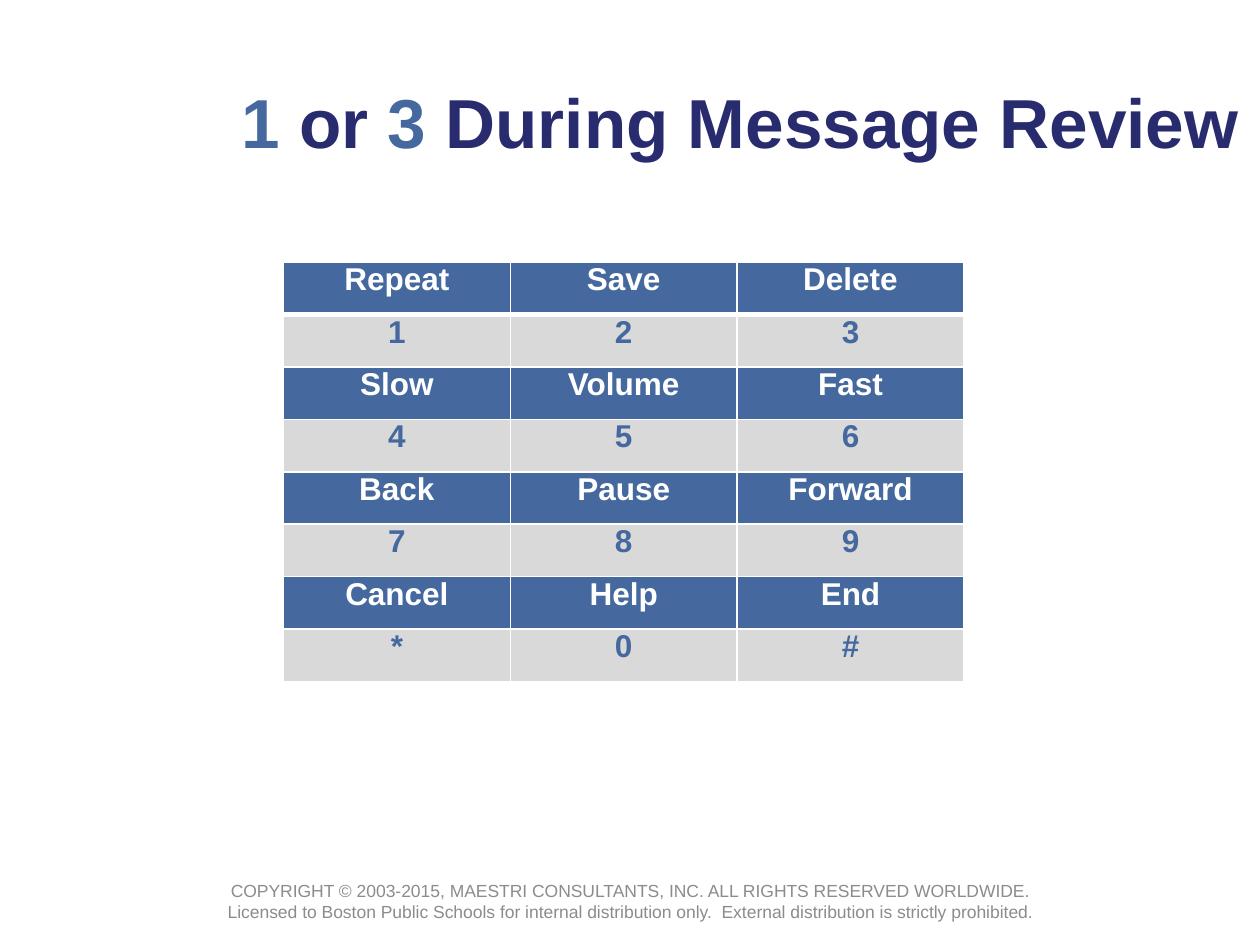
"""Build the slide showing the phone keypad commands for message review."""
from lxml import etree
from pptx import Presentation, util as u
from pptx.dml import color
from pptx.enum import text
from pptx.oxml import ns

COLORS = {"blue": "45699E", "navy": "282B6D", "gray": "D9D9D9",
          "white": "FFFFFF", "footer": "8C8C8C"}
KEYPAD = [("Repeat", "Save", "Delete"), ("1", "2", "3"),
          ("Slow", "Volume", "Fast"), ("4", "5", "6"),
          ("Back", "Pause", "Forward"), ("7", "8", "9"),
          ("Cancel", "Help", "End"), ("*", "0", "#")]


def add_text(frame, spans, size, bold):
    para = frame.paragraphs[0]
    para.alignment = text.PP_ALIGN.CENTER
    for words, shade in spans:
        span = para.add_run()
        span.text = words
        for name, value in {"name": "Arial", "size": u.Pt(size), "bold": bold}.items():
            setattr(span.font, name, value)
        span.font.color.rgb = color.RGBColor.from_string(COLORS[shade])


def add_borders(cell, widths):
    properties = cell._tc.get_or_add_tcPr()
    for index, (side, width) in enumerate(widths.items()):
        line = etree.Element(ns.qn(f"a:ln{side}"), w=str(u.Pt(width)))
        fill = etree.SubElement(line, ns.qn("a:solidFill"))
        etree.SubElement(fill, ns.qn("a:srgbClr"), val=COLORS["white"])
        properties.insert(index, line)


deck = Presentation()
deck.slide_width, deck.slide_height = u.Inches(10), u.Inches(7.5)
page = deck.slides.add_slide(deck.slide_layouts[5])

title = page.shapes.title
place = {"left": 1.75, "top": 0.33, "width": 8.25, "height": 1.25}
for name, value in place.items():
    setattr(title, name, u.Inches(value))
footer = page.shapes.add_textbox(u.Inches(1.5), u.Inches(6.95), u.Inches(7), u.Inches(0.4))
frame_format = {"word_wrap": True, "auto_size": text.MSO_AUTO_SIZE.NONE,
                "vertical_anchor": text.MSO_ANCHOR.MIDDLE}
for box in (title, footer):
    for name, value in frame_format.items():
        setattr(box.text_frame, name, value)

add_text(title.text_frame, [("1", "blue"), (" or ", "navy"), ("3", "blue"),
                            (" During Message Review", "navy")], 39.6, True)
add_text(footer.text_frame, [(
    "COPYRIGHT © 2003-2015, MAESTRI CONSULTANTS, INC. ALL RIGHTS RESERVED WORLDWIDE. "
    "Licensed to Boston Public Schools for internal distribution only.  "
    "External distribution is strictly prohibited.", "footer")], 10, False)

table = page.shapes.add_table(len(KEYPAD), 3, u.Inches(2.25), u.Inches(2.08),
                              u.Inches(5.4), u.Inches(3.33)).table
cell_format = {"margin_left": u.Inches(0.07), "margin_right": u.Inches(0.07),
               "margin_top": 0, "margin_bottom": 0,
               "vertical_anchor": text.MSO_ANCHOR.TOP}
for row, labels in enumerate(KEYPAD):
    fill, ink = ("gray", "blue") if row % 2 else ("blue", "white")
    widths = {"L": 1, "R": 1, "T": 3 if row == 1 else 1, "B": 3 if row == 0 else 1}
    for column, label in enumerate(labels):
        cell = table.cell(row, column)
        for name, value in cell_format.items():
            setattr(cell, name, value)
        cell.fill.solid()
        cell.fill.fore_color.rgb = color.RGBColor.from_string(COLORS[fill])
        add_borders(cell, widths)
        add_text(cell.text_frame, [(label, ink)], 18, True)

deck.save("out.pptx")
